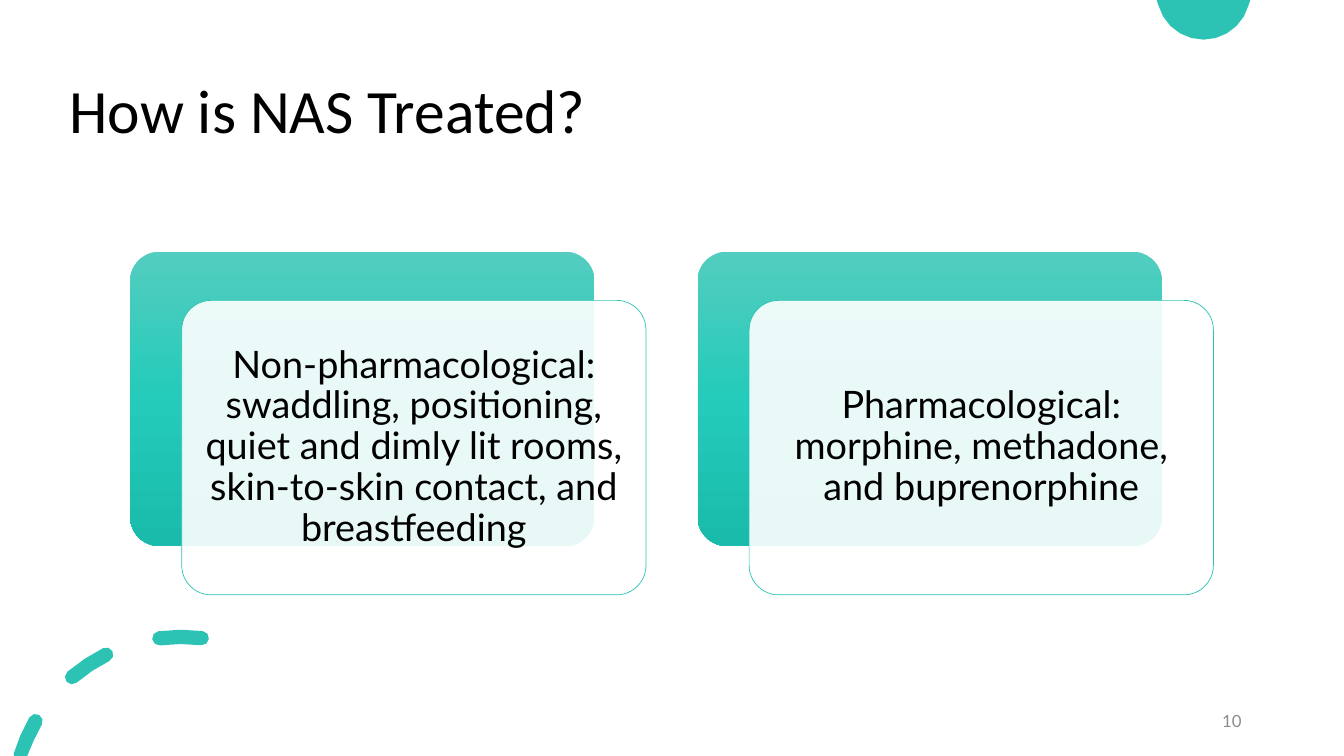
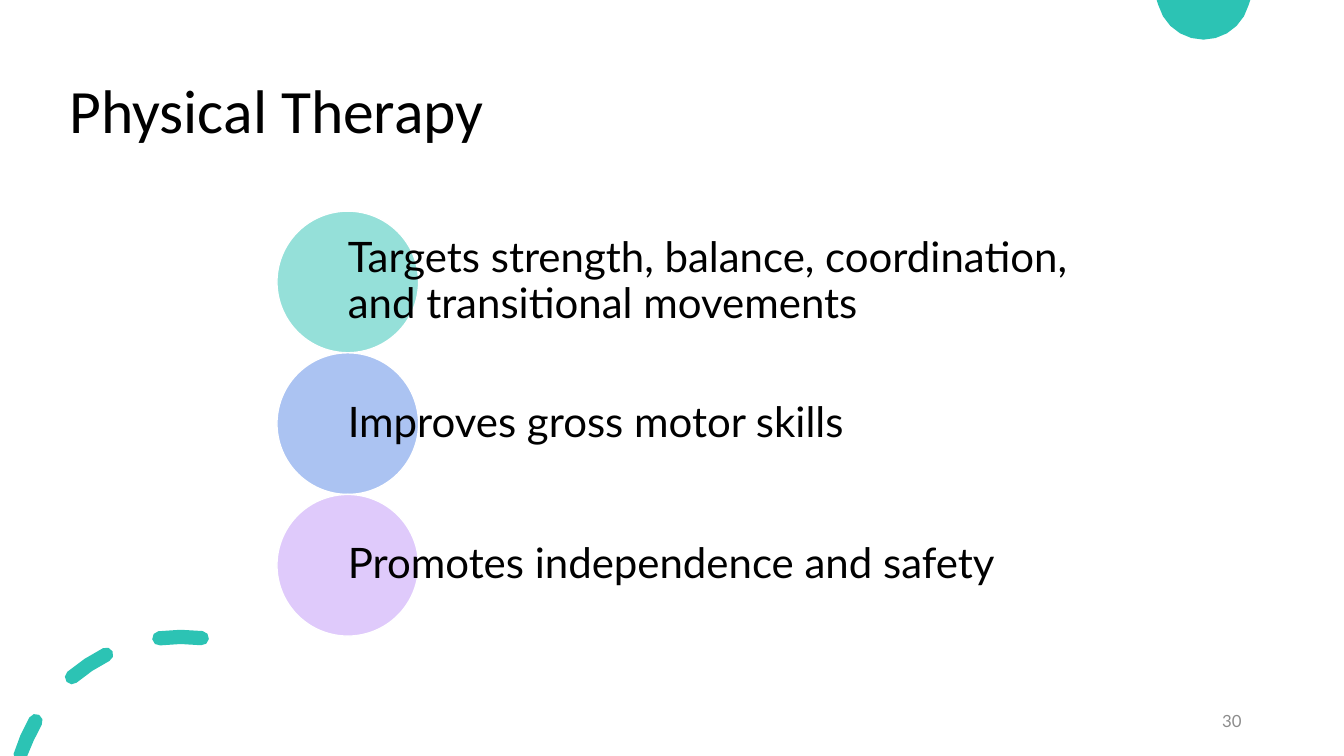
import copy
import math

import pptx
import pptx.dml.color
import pptx.enum.shapes
import pptx.enum.text
import pptx.oxml.ns
import pptx.util
from lxml import etree

Cm = pptx.util.Cm
Pt = pptx.util.Pt
Align = pptx.enum.text.PP_ALIGN
Preset = pptx.enum.shapes.MSO_SHAPE
qn = pptx.oxml.ns.qn
color = pptx.dml.color.RGBColor.from_string

TEAL = "2CC3B4"
WHITE = "FFFFFF"
SLIDE_HEIGHT = 19.05


def write(shape, text, size, font="Lato", ink="000000", align=Align.LEFT, spacing=0.9, margins=(0.25, 0.13)):
    frame = shape.text_frame
    frame.word_wrap = True
    frame.auto_size = pptx.enum.text.MSO_AUTO_SIZE.NONE
    frame.vertical_anchor = pptx.enum.text.MSO_ANCHOR.MIDDLE
    frame.margin_left = frame.margin_right = Cm(margins[0])
    frame.margin_top = frame.margin_bottom = Cm(margins[1])
    paragraph = frame.paragraphs[0]
    paragraph.alignment = align
    paragraph.line_spacing = spacing
    run = paragraph.add_run()
    run.text = text
    run.font.name = font
    run.font.size = Pt(size)
    run.font.color.rgb = color(ink)


def add_filled(slide, preset, box, fill, opacity, line, line_width):
    shape = slide.shapes.add_shape(preset, *map(Cm, box))
    shape.shadow.inherit = False
    shape.fill.solid()
    shape.fill.fore_color.rgb = color(fill)
    fill_color = shape.element.spPr.find(qn("a:solidFill"))[0]
    etree.SubElement(fill_color, qn("a:alpha"), val=str(opacity * 1000))
    shape.line.color.rgb = color(line)
    shape.line.width = Pt(line_width)
    return shape


presentation = pptx.Presentation()
presentation.slide_width = Cm(33.87)
presentation.slide_height = Cm(SLIDE_HEIGHT)
layout = presentation.slide_layouts[5]

slides = []
for title_text in ("How is NAS Treated?", "Physical Therapy"):
    slide = presentation.slides.add_slide(layout)
    title = slide.shapes.title
    title.left, title.top, title.width, title.height = map(Cm, (1.5, 1.02, 29.21, 3.68))
    write(title, title_text, 44, font="Calibri")
    slides.append(slide)
treatment_slide, therapy_slide = slides

disc = []
for degrees in range(0, 181, 15):
    angle = math.radians(degrees)
    disc.append((30.33 + 1.18 * math.cos(angle), -0.18 + 1.18 * math.sin(angle)))

ring_x, ring_y, ring_radius, half_width = 4.57, 20.29, 4.24, 0.18
dashes = []
for start, end in ((197, 210), (229.5, 243.5), (262.5, 277)):
    dash = []
    for side, first, last in ((1, start, end), (-1, end, start)):
        radius = ring_radius + side * half_width
        for degrees in (first, (first + last) / 2, last):
            angle = math.radians(degrees)
            dash.append((ring_x + radius * math.cos(angle), ring_y + radius * math.sin(angle)))
        cap_angle = math.radians(last)
        cap_x = ring_x + ring_radius * math.cos(cap_angle)
        cap_y = ring_y + ring_radius * math.sin(cap_angle)
        for turn in (45, 90, 135):
            angle = cap_angle + math.radians(turn if side > 0 else turn + 180)
            dash.append((cap_x + half_width * math.cos(angle), cap_y + half_width * math.sin(angle)))
    dashes.append(dash)

for contours in ([disc], dashes):
    builder = None
    for contour in contours:
        points = [(Cm(x), Cm(min(max(y, 0), SLIDE_HEIGHT))) for x, y in contour]
        if builder is None:
            builder = treatment_slide.shapes.build_freeform(*points[0])
        else:
            builder.move_to(*points[0])
        builder.add_line_segments(points[1:], close=True)
    decoration = builder.convert_to_shape()
    decoration.shadow.inherit = False
    decoration.fill.solid()
    decoration.fill.fore_color.rgb = color(TEAL)
    decoration.line.fill.background()
    layout.shapes.element.append(decoration.element)

treatments = (
    "Non-pharmacological: swaddling, positioning, quiet and dimly lit rooms, skin-to-skin contact, and breastfeeding",
    "Pharmacological: morphine, methadone, and buprenorphine",
)
card_width, card_height = 11.7, 7.42
for index, text in enumerate(treatments):
    left, top = 3.28 + 14.3 * index, 6.34
    back_card = treatment_slide.shapes.add_shape(
        Preset.ROUNDED_RECTANGLE, Cm(left), Cm(top), Cm(card_width), Cm(card_height))
    back_card.shadow.inherit = False
    back_card.line.fill.background()
    back_card.fill.gradient()
    back_card.fill.gradient_angle = 270
    stop_list = back_card.element.spPr.find(".//" + qn("a:gsLst"))
    stop_list.insert(1, copy.deepcopy(stop_list[0]))
    stops = ((0, "53CDBF"), (0.5, "24CBBA"), (1, "1ABBAB"))
    for stop, (position, shade) in zip(back_card.fill.gradient_stops, stops):
        stop.position = position
        stop.color.rgb = color(shade)
    front_card = add_filled(treatment_slide, Preset.ROUNDED_RECTANGLE,
                            (left + 1.3, top + 1.23, card_width, card_height), WHITE, 90, TEAL, 0.5)
    for card in (back_card, front_card):
        card.adjustments[0] = 0.1
    write(front_card, text, 27, align=Align.CENTER, margins=(0.28, 0.28))

benefits = (
    ("Targets strength, balance, coordination, and transitional movements", TEAL),
    ("Improves gross motor skills", "5888E7"),
    ("Promotes independence and safety", "C097F8"),
)
diameter = 3.57
for index, (text, fill) in enumerate(benefits):
    top = 5.32 + diameter * index
    add_filled(therapy_slide, Preset.OVAL, (6.98, top, diameter, diameter), fill, 50, WHITE, 1)
    benefit_box = therapy_slide.shapes.add_textbox(Cm(6.98 + diameter / 2), Cm(top), Cm(19.05), Cm(diameter))
    write(benefit_box, text, 30, margins=(0, 0.1))

for slide, number in zip(slides, ("10", "30")):
    number_box = slide.shapes.add_textbox(Cm(23.92), Cm(17.65), Cm(7.62), Cm(1.02))
    write(number_box, number, 12, ink="8C8C8C", align=Align.RIGHT, spacing=1)

presentation.save("out.pptx")
